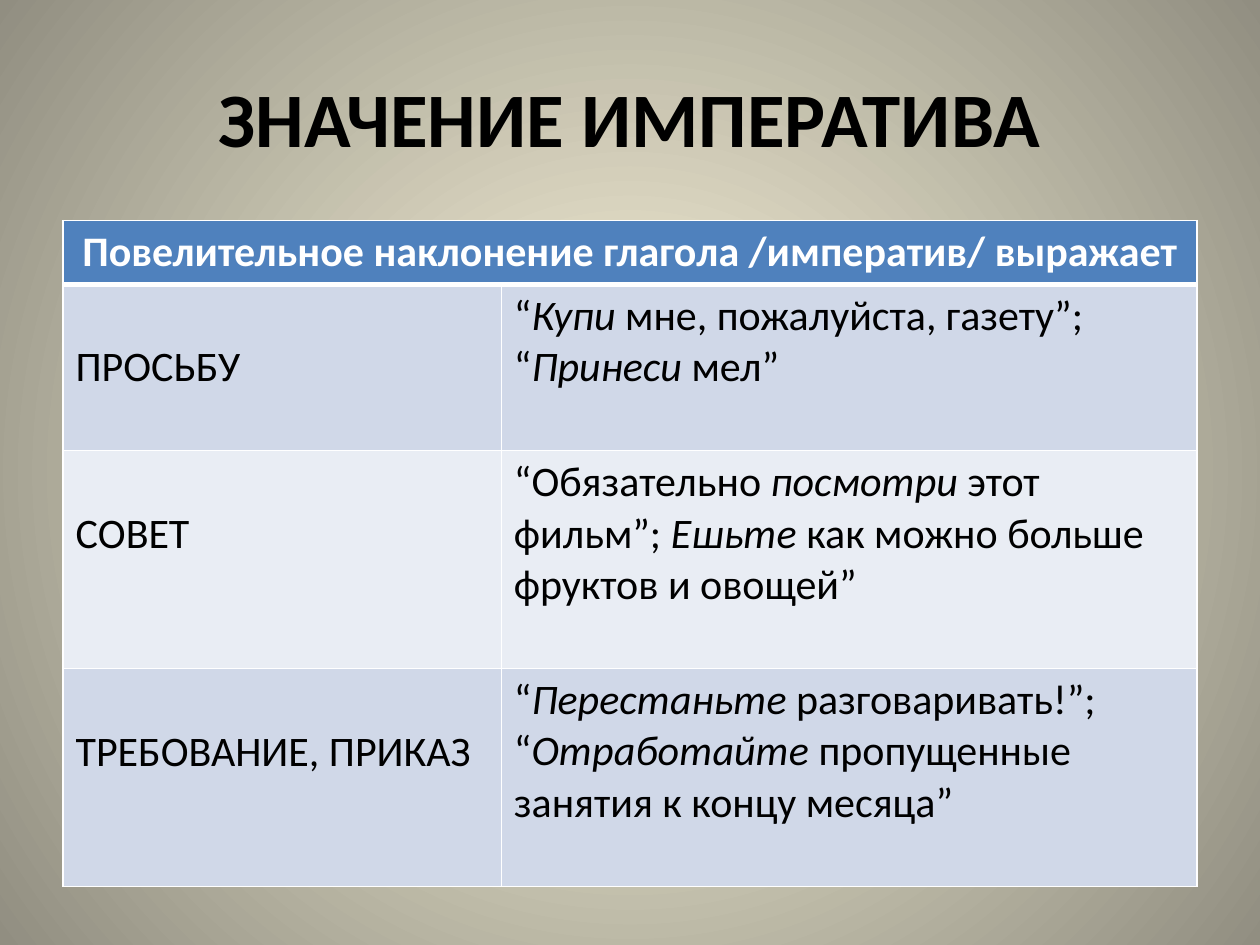
import pptx
import pptx.util
import pptx.dml.color
import pptx.enum.text
import pptx.oxml.ns
import lxml.etree

Pt = pptx.util.Pt
qn = pptx.oxml.ns.qn
FONT = "Calibri"
HEADER = "Повелительное наклонение глагола /императив/ выражает"
ROWS = [
    ("ПРОСЬБУ", ["“", "Купи", " мне, пожалуйста, газету”; “", "Принеси", " мел”"]),
    ("СОВЕТ", ["“Обязательно ", "посмотри", " этот фильм”; ", "Ешьте",
               " как можно больше фруктов и овощей”"]),
    ("ТРЕБОВАНИЕ, ПРИКАЗ", ["“", "Перестаньте", " разговаривать!”; “", "Отработайте",
                            " пропущенные занятия к концу месяца”"]),
]
COL_WIDTHS = [250.5, 397.5]
ROW_HEIGHTS = [36.5, 95, 124.5, 124.5]
BANDS = ["D0D8E8", "E9EDF4"]
LABEL_TOP = 33


def rgb(color):
    return pptx.dml.color.RGBColor.from_string(color)


def style(p, size, color, bold=False, centered=False):
    p.font.name = FONT
    p.font.size = Pt(size)
    p.font.bold = bold
    p.font.color.rgb = rgb(color)
    if centered:
        p.alignment = pptx.enum.text.PP_ALIGN.CENTER


def add_background(s, inner, outer):
    fill = s.background.fill
    fill.gradient()
    for stop, color, position in zip(fill.gradient_stops, (inner, outer), (0, 1)):
        stop.color.rgb = rgb(color)
        stop.position = position
    lin = s._element.find(".//" + qn("a:lin"))
    grad = lin.getparent()
    grad.remove(lin)
    circle = lxml.etree.SubElement(grad, qn("a:path"), {"path": "circle"})
    center = dict.fromkeys("ltrb", "50000")
    lxml.etree.SubElement(circle, qn("a:fillToRect"), center)


def add_title(s, x, y, w, h, text):
    tf = s.shapes.add_textbox(Pt(x), Pt(y), Pt(w), Pt(h)).text_frame
    tf.word_wrap = True
    tf.vertical_anchor = pptx.enum.text.MSO_ANCHOR.MIDDLE
    p = tf.paragraphs[0]
    p.text = text
    style(p, 44, "000000", bold=True, centered=True)


def paint_cell(cell, color, top=1, bottom=1):
    tcPr = cell._tc.get_or_add_tcPr()
    for side, width in zip("LRTB", (1, 1, top, bottom)):
        ln = lxml.etree.SubElement(tcPr, qn("a:ln" + side), {"w": str(Pt(width))})
        solid = lxml.etree.SubElement(ln, qn("a:solidFill"))
        lxml.etree.SubElement(solid, qn("a:srgbClr"), {"val": "FFFFFF"})
    cell.fill.solid()
    cell.fill.fore_color.rgb = rgb(color)


def add_meanings(s, x, y):
    table = s.shapes.add_table(
        len(ROW_HEIGHTS), len(COL_WIDTHS), Pt(x), Pt(y),
        Pt(sum(COL_WIDTHS)), Pt(sum(ROW_HEIGHTS))).table
    for column, width in zip(table.columns, COL_WIDTHS):
        column.width = Pt(width)
    for row, height in zip(table.rows, ROW_HEIGHTS):
        row.height = Pt(height)

    header = table.cell(0, 0)
    header.merge(table.cell(0, 1))
    for cell in table.rows[0].cells:
        paint_cell(cell, "4F81BD", bottom=3)
    p = header.text_frame.paragraphs[0]
    p.text = HEADER
    style(p, 24, "FFFFFF", bold=True, centered=True)

    for i, (meaning, example) in enumerate(ROWS, 1):
        label, sample = table.rows[i].cells
        label.margin_top = Pt(LABEL_TOP)
        label.text = meaning
        p = sample.text_frame.paragraphs[0]
        for j, part in enumerate(example):
            r = p.add_run()
            r.text = part
            r.font.italic = j % 2 == 1
        for cell in (label, sample):
            paint_cell(cell, BANDS[(i - 1) % 2], top=3 if i == 1 else 1)
            style(cell.text_frame.paragraphs[0], 24, "000000")


def main():
    prs = pptx.Presentation()
    prs.slide_width, prs.slide_height = Pt(720), Pt(540)
    s = prs.slides.add_slide(prs.slide_layouts[6])
    add_background(s, "FCF7DD", "918E81")
    add_title(s, 36, 21.6, 648, 90, "ЗНАЧЕНИЕ ИМПЕРАТИВА")
    add_meanings(s, 36, 126)
    prs.save("out.pptx")


if __name__ == "__main__":
    main()
